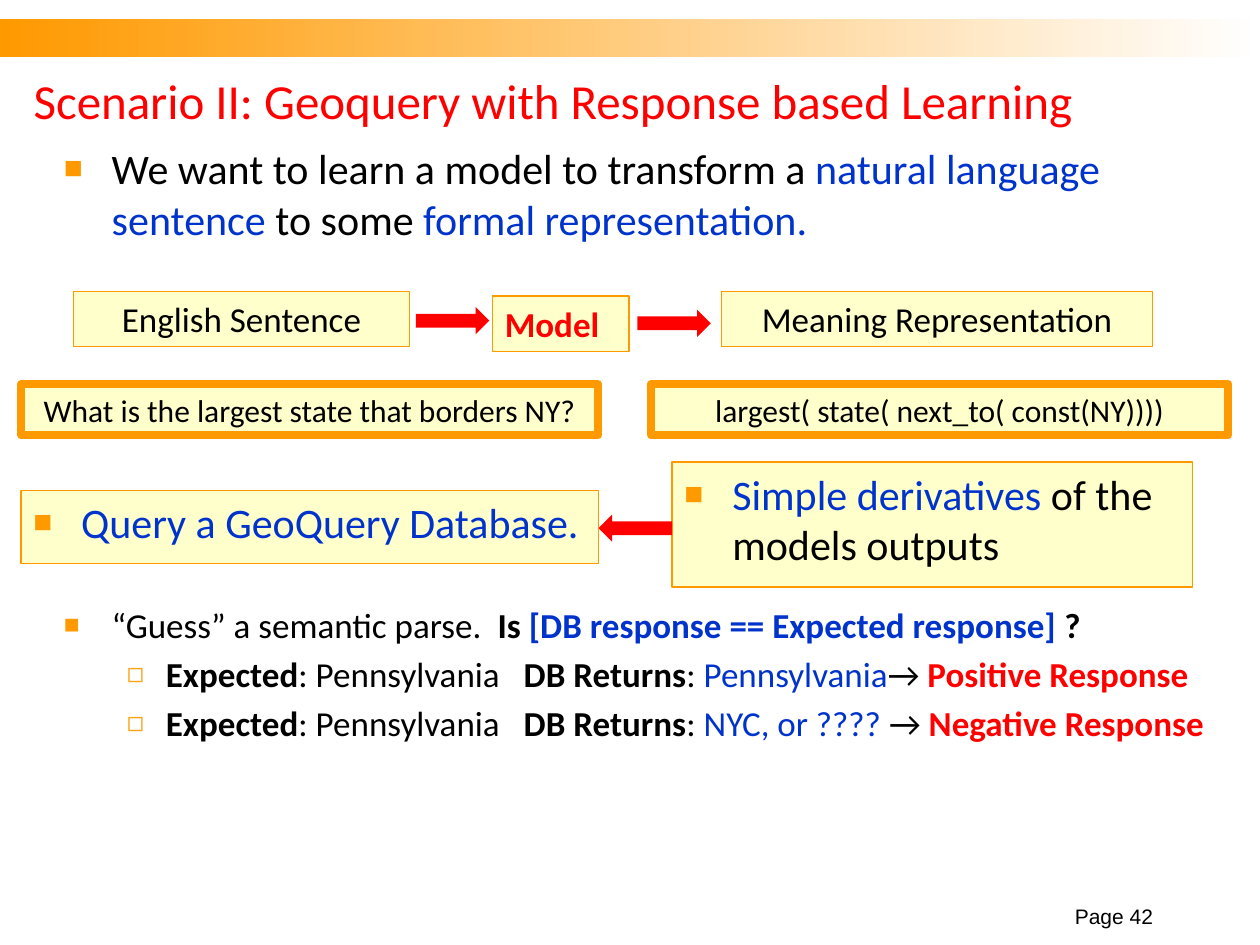
import pptx
import pptx.util
import pptx.dml.color
import pptx.enum.shapes
import pptx.enum.text
import pptx.oxml
import pptx.oxml.ns

COLORS = {"orange": "FF9900", "amber": "FBA313", "cream": "FFFFCC", "red": "FF0000",
          "blue": "0033CC", "black": "000000", "white": "FFFFFF"}
COLUMNS, ROWS = 120, 90
SHAPES = pptx.enum.shapes.MSO_SHAPE
ALIGN = pptx.enum.text.PP_ALIGN
ANCHOR = pptx.enum.text.MSO_ANCHOR

# Bullet levels: left margin, hanging indent (inches), symbol, colour, size in percent
BULLETS = [(0.38, 0.38, "■", "orange", 75), (0.81, 0.31, "◻", "amber", 80)]


def color(name):
    return pptx.dml.color.RGBColor.from_string(COLORS[name])


def add_xml(parent, tag, **attributes):
    element = pptx.oxml.parse_xml(f"<a:{tag} {pptx.oxml.ns.nsdecls('a')}/>")
    for key, value in attributes.items():
        element.set(key, str(value))
    parent.append(element)
    return element


class SlideBuilder:
    def __init__(self, deck):
        self.deck = deck
        self.font = "Calibri"
        self.page = deck.slides.add_slide(deck.slide_layouts[5])

    def place(self, column, row, width, height):
        """Turn grid columns and rows into lengths."""
        across, down = self.deck.slide_width / COLUMNS, self.deck.slide_height / ROWS
        return int(column * across), int(row * down), int(width * across), int(height * down)

    def add_spans(self, para, spans, size, align=ALIGN.LEFT, font=None):
        """Fill a paragraph with (text, colour, bold) spans."""
        para.alignment = align
        for text, shade, bold in spans:
            span = para.add_run()
            span.text = text
            span.font.name = font or self.font
            span.font.size = pptx.util.Pt(size)
            span.font.bold = bold
            span.font.color.rgb = color(shade)

    def bullet(self, para, level, tab=None):
        margin, hang, symbol, shade, percent = BULLETS[level]
        properties = para._p.get_or_add_pPr()
        properties.set("marL", str(pptx.util.Inches(margin)))
        properties.set("indent", str(-pptx.util.Inches(hang)))
        if level:
            properties.set("lvl", str(level))
        add_xml(add_xml(properties, "buClr"), "srgbClr", val=COLORS[shade])
        add_xml(properties, "buSzPct", val=percent * 1000)
        add_xml(properties, "buFont", typeface="Arial")
        add_xml(properties, "buChar", char=symbol)
        if tab:
            add_xml(add_xml(properties, "tabLst"), "tab", pos=pptx.util.Inches(tab), algn="l")

    def title(self, text, *area):
        box = self.page.shapes.title
        box.left, box.top, box.width, box.height = self.place(*area)
        frame = box.text_frame
        frame.auto_size = pptx.enum.text.MSO_AUTO_SIZE.NONE
        frame.vertical_anchor = ANCHOR.MIDDLE
        self.add_spans(frame.paragraphs[0], [(text, "red", False)], 28)

    def shape(self, kind, area, fill, line=None, weight=0.75):
        shape = self.page.shapes.add_shape(kind, *self.place(*area))
        shape.shadow.inherit = False
        shape.fill.solid()
        shape.fill.fore_color.rgb = color(fill)
        if line:
            shape.line.color.rgb = color(line)
            shape.line.width = pptx.util.Pt(weight)
            add_xml(shape.line._ln, "round")
        else:
            shape.line.fill.background()
        return shape

    def band(self, *area):
        band = self.shape(SHAPES.RECTANGLE, area, "orange")
        band.fill.gradient()
        band.fill.gradient_angle = 0
        for stop, shade in zip(band.fill.gradient_stops, ("orange", "white")):
            stop.color.rgb = color(shade)

    def arrow(self, *area, rotation=0):
        self.shape(SHAPES.RIGHT_ARROW, area, "red").rotation = rotation

    def box(self, area, spans, size, align=ALIGN.CENTER, weight=0.75, bulleted=False):
        frame = self.shape(SHAPES.RECTANGLE, area, "cream", "orange", weight).text_frame
        frame.word_wrap = True
        frame.vertical_anchor = ANCHOR.TOP
        para = frame.paragraphs[0]
        if bulleted:
            self.bullet(para, 0)
        self.add_spans(para, spans, size, align)

    def text(self, area):
        frame = self.page.shapes.add_textbox(*self.place(*area)).text_frame
        frame.word_wrap = True
        return frame

    def bullets(self, area, items, size, tab=None):
        """Lay out (level, spans) items as a bulleted list."""
        frame = self.text(area)
        for number, (level, spans) in enumerate(items):
            para = frame.add_paragraph() if number else frame.paragraphs[0]
            self.bullet(para, level, tab if level else None)
            if number:
                para.space_before = pptx.util.Pt(size * 0.2)
            self.add_spans(para, spans, size)

    def footer(self, text, *area):
        frame = self.text(area)
        frame.vertical_anchor = ANCHOR.BOTTOM
        self.add_spans(frame.paragraphs[0], [(text, "black", False)], 12, ALIGN.RIGHT, "Arial")


def outcome(returned, verdict):
    return 1, [("Expected", "black", True), (": Pennsylvania\t", "black", False),
               ("DB Returns", "black", True), (": ", "black", False),
               (returned, "blue", False), ("→ ", "black", False), (verdict, "red", True)]


def main():
    deck = pptx.Presentation()
    deck.slide_width, deck.slide_height = pptx.util.Inches(10), pptx.util.Inches(7.5)
    slide = SlideBuilder(deck)

    # Heading
    slide.band(0, 1.8, COLUMNS, 3.6)
    slide.title("Scenario II: Geoquery with Response based Learning", 2, 6, 108, 7)
    slide.bullets((4.9, 13, 112, 11), [
        (0, [("We want to learn a model to transform a ", "black", False),
             ("natural language sentence", "blue", False), (" to some ", "black", False),
             ("formal representation.", "blue", False)])], 24)

    # Sentence to meaning, through the model
    slide.box((46.9, 28.2, 13, 5.25), [("Model", "red", True)], 20, ALIGN.LEFT)
    for column, width, label in ((7, 32, "English Sentence"),
                                 (68.75, 41, "Meaning Representation")):
        slide.box((column, 27.75, width, 5.25), [(label, "black", False)], 20)
    slide.arrow(39.6, 29.25, 7, 2.6)
    slide.arrow(60.7, 29.5, 7, 2.6)

    # Example pair
    for column, example in ((2, "What is the largest state that borders NY?"),
                            (62, "largest( state( next_to( const(NY))))")):
        slide.box((column, 36.6, 55, 4.85), [(example, "black", False)], 18, weight=4.5)

    # Query derived from the output
    slide.box((64, 44, 49.6, 11.9), [("Simple derivatives ", "blue", False),
              ("of the models outputs", "black", False)], 24, ALIGN.LEFT, bulleted=True)
    slide.arrow(57, 49, 7, 2.6, rotation=180)
    slide.box((2, 46.7, 55, 7), [("Query a GeoQuery Database.", "blue", False)],
              24, ALIGN.LEFT, bulleted=True)

    # Response check
    slide.bullets((4.9, 56.9, 112, 15), [
        (0, [("“Guess” a semantic parse.  ", "black", False), ("Is ", "black", True),
             ("[DB response == Expected response] ", "blue", True), ("?", "black", True)]),
        outcome("Pennsylvania", "Positive Response"),
        outcome("NYC, or ???? ", "Negative Response")], 20, tab=3.65)

    slide.footer("Page 42", 99, 86, 12, 3)
    deck.save("out.pptx")


if __name__ == "__main__":
    main()
